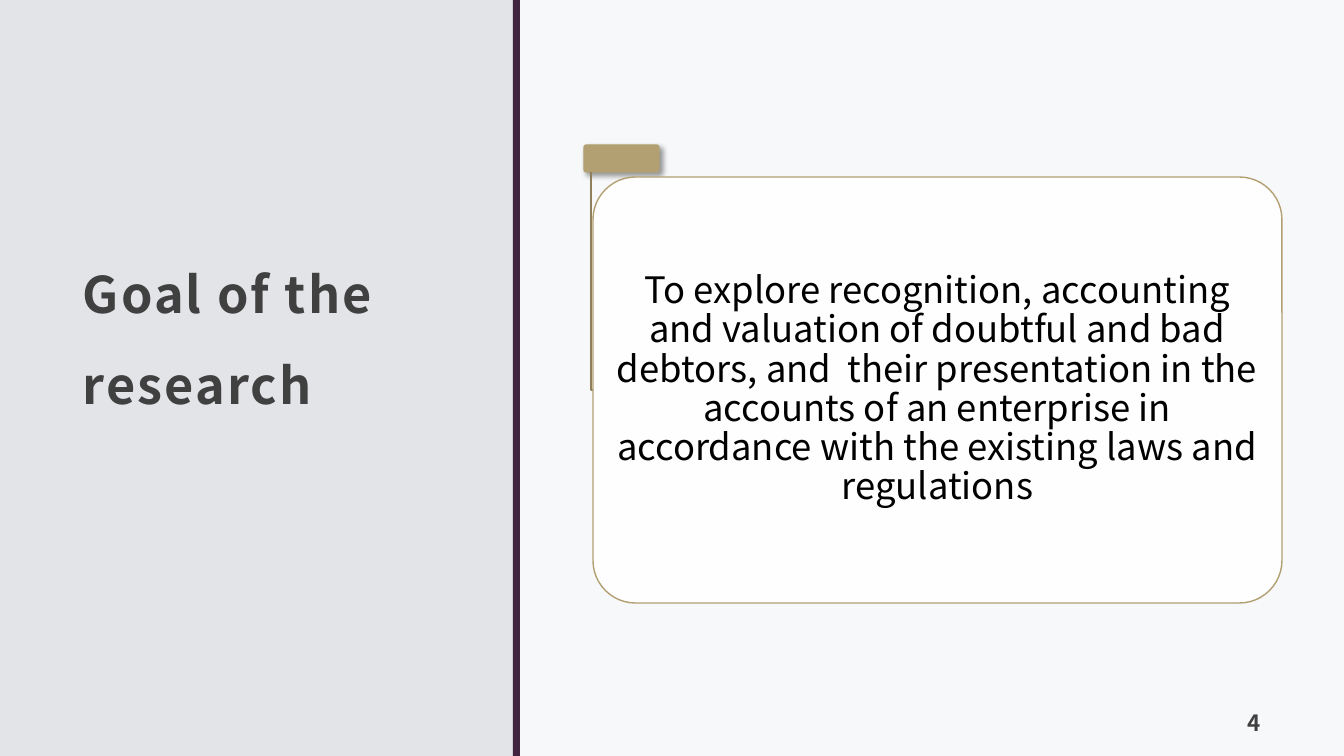
import pptx
import pptx.util
import pptx.dml.color
import pptx.enum.shapes
import pptx.enum.text
import pptx.oxml
import pptx.oxml.ns

SHAPE = pptx.enum.shapes.MSO_SHAPE
ALIGN = pptx.enum.text.PP_ALIGN
ANCHOR = pptx.enum.text.MSO_ANCHOR
WIDE, HIGH = 1344, 756
SCALE = 914400 / 100.8
GOLD, GREY = "B2A072", "404040"


def px(n):
    return pptx.util.Emu(round(n * SCALE))


def tint(code):
    return pptx.dml.color.RGBColor.from_string(code)


def put(item, form):
    """Set each attribute named in the dict form on item."""
    for name, value in form.items():
        setattr(item, name, value)


class Deck:
    """Holds the font and the current slide, and draws on it."""

    font = "Noto Sans CJK JP"

    def __init__(self, ground):
        self.show = pptx.Presentation()
        put(self.show, {"slide_width": px(WIDE), "slide_height": px(HIGH)})
        self.slide = self.show.slides.add_slide(self.show.slide_layouts[6])
        fill = self.slide.background.fill
        fill.solid()
        fill.fore_color.rgb = tint(ground)

    def shape(self, kind, box, fill, line=None, alpha=100):
        item = self.slide.shapes.add_shape(kind, *map(px, box))
        item.shadow.inherit = False
        item.fill.solid()
        item.fill.fore_color.rgb = tint(fill)
        if alpha < 100:
            solid = item._element.spPr.find(pptx.oxml.ns.qn("a:solidFill"))
            solid[0].append(pptx.oxml.parse_xml(
                f'<a:alpha {pptx.oxml.ns.nsdecls("a")} val="{alpha * 1000}"/>'))
        self.edge(item, line)
        return item

    def round(self, box, fill, alpha=100):
        item = self.shape(SHAPE.ROUNDED_RECTANGLE, box, fill, GOLD, alpha)
        item.adjustments[0] = 0.1
        return item

    def edge(self, item, line):
        if line:
            item.line.color.rgb = tint(line)
            item.line.width = pptx.util.Pt(1)
        else:
            item.line.fill.background()

    def trace(self, points, line):
        """Draw an open, unfilled outline through the points."""
        form = self.slide.shapes.build_freeform(*points[0], scale=SCALE)
        form.add_line_segments(points[1:], close=False)
        item = form.convert_to_shape()
        item.shadow.inherit = False
        item.fill.background()
        self.edge(item, line)

    def shade(self, item):
        """Cast a soft shadow to the lower right."""
        cast = item._element.spPr.find(pptx.oxml.ns.qn("a:effectLst"))
        cast.append(pptx.oxml.parse_xml(
            f'<a:outerShdw {pptx.oxml.ns.nsdecls("a")} blurRad="50800" dist="38100" '
            'dir="2700000" algn="tl" rotWithShape="0"><a:srgbClr val="000000">'
            '<a:alpha val="40000"/></a:srgbClr></a:outerShdw>'))

    def text(self, item, words, size, color, inset, anchor, align,
             space=1.0, bold=False, track=0):
        frame = item.text_frame
        left, top, right, base = map(px, inset)
        put(frame, {"word_wrap": True, "vertical_anchor": anchor,
                    "margin_left": left, "margin_top": top,
                    "margin_right": right, "margin_bottom": base})
        para = frame.paragraphs[0]
        put(para, {"alignment": align, "line_spacing": space})
        run = para.add_run()
        run.text = words
        put(run.font, {"name": self.font, "size": pptx.util.Pt(size), "bold": bold})
        run.font.color.rgb = tint(color)
        if track:
            run._r.get_or_add_rPr().set("spc", str(track))

    def label(self, box, words, size, anchor, align, space=1.0):
        item = self.slide.shapes.add_textbox(*map(px, box))
        self.text(item, words, size, GREY, (12, 12, 12, 10), anchor, align,
                  space, True, 150)


def main():
    deck = Deck("E2E4E8")
    deck.shape(SHAPE.RECTANGLE, (520, 0, WIDE - 520, HIGH), "FFFFFF", alpha=75)
    deck.shape(SHAPE.RECTANGLE, (513, 0, 7, HIGH), "41243F")
    deck.label((71, 78, 376, 490), "Goal of the research", 36,
               ANCHOR.MIDDLE, ALIGN.LEFT, 1.5)
    deck.label((1165, 696, 108, 50), "4", 16, ANCHOR.BOTTOM, ALIGN.RIGHT)

    deck.shade(deck.round((584, 145, 75, 27), GOLD))
    deck.trace([(591, 172), (591, 390), (593, 390)], "8F805B")
    card = deck.round((593, 177, 689, 426), "FFFFFF", 90)
    deck.text(card, "To explore recognition, accounting and valuation of doubtful "
              "and bad debtors, and  their presentation in the accounts of an "
              "enterprise in accordance with the existing laws and regulations",
              26, "000000", (5, 4, 5, 4), ANCHOR.MIDDLE, ALIGN.CENTER, 0.9)
    deck.show.save("out.pptx")


if __name__ == "__main__":
    main()
